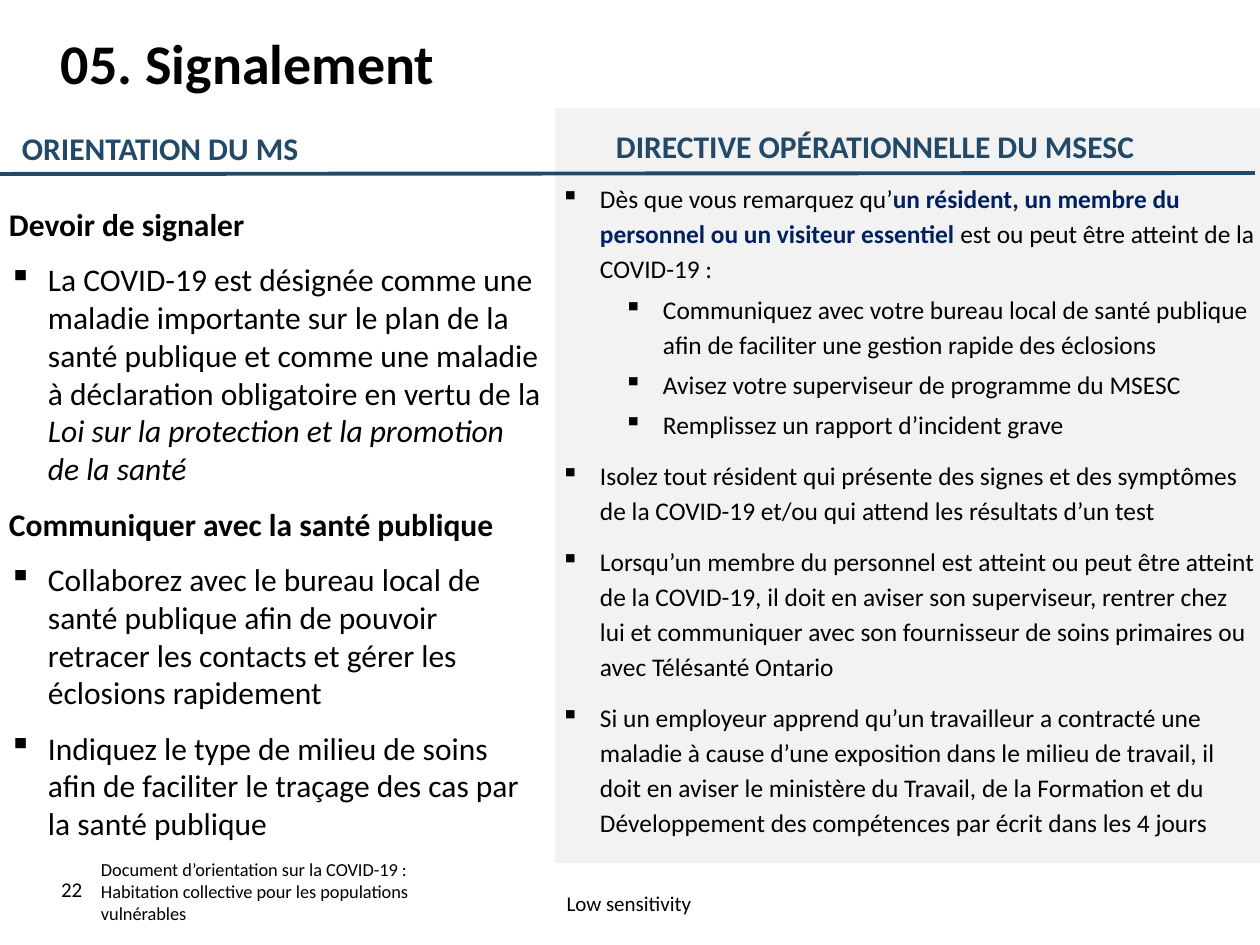
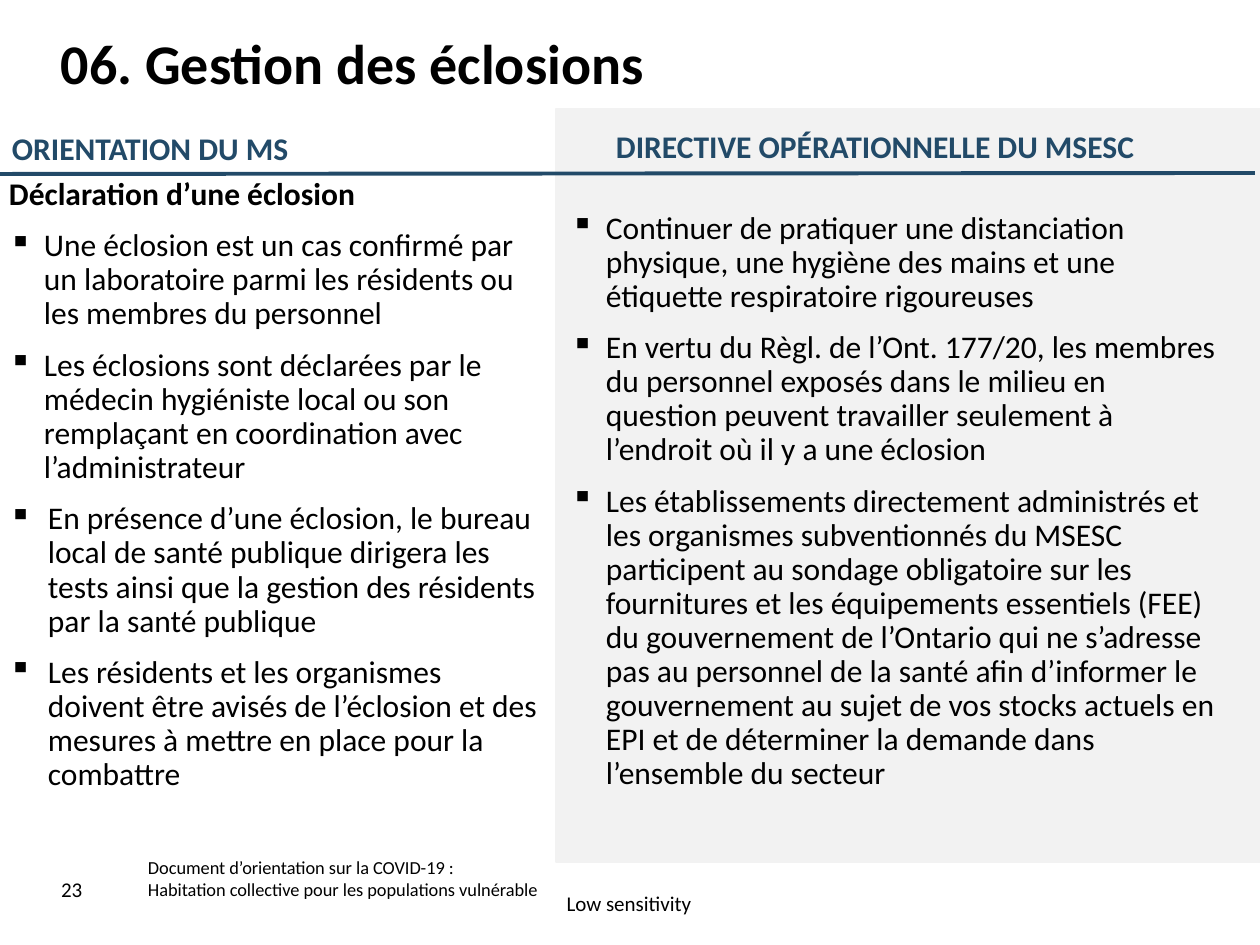
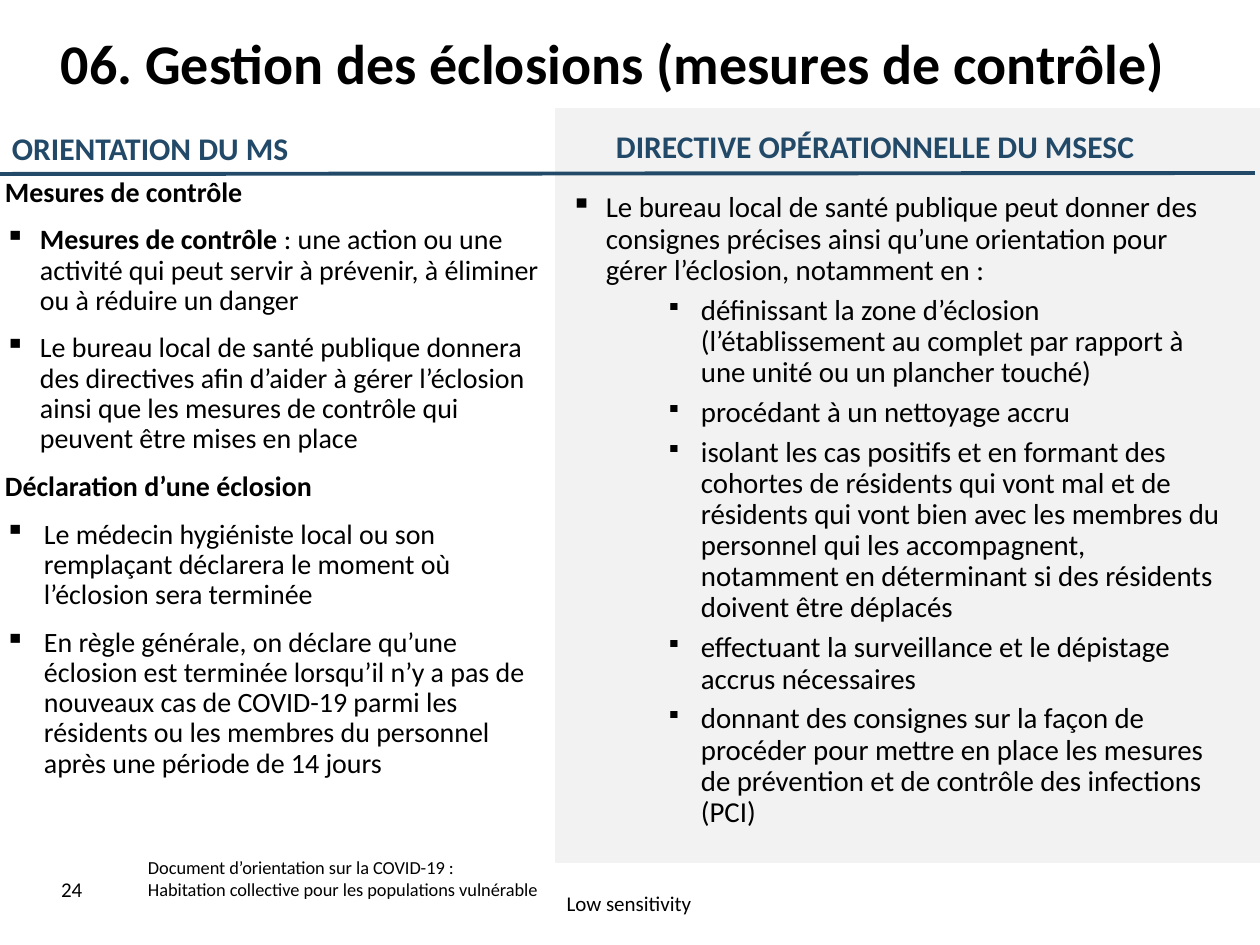
from dataclasses import dataclass

from lxml.etree import SubElement
from pptx import Presentation
from pptx.dml.color import RGBColor
from pptx.enum.shapes import MSO_CONNECTOR, MSO_SHAPE
from pptx.enum.text import MSO_ANCHOR, PP_ALIGN
from pptx.oxml.ns import qn
from pptx.util import Inches, Pt

BLACK = RGBColor(0x00, 0x00, 0x00)
NAVY = RGBColor(0x00, 0x20, 0x60)
TEAL = RGBColor(0x22, 0x4A, 0x68)
GRAY = RGBColor(0xF2, 0xF2, 0xF2)
FONT = "Calibri"
SCALE = Inches(1) / 126
INSET = (13, 6, 13, 6)
BODY = (9, 5, 9, 5)


def px(num):
    return round(num * SCALE)


@dataclass
class Para:
    """A paragraph; each run is text or a (text, look) pair."""
    runs: tuple
    bold: bool = False
    left: int = 0
    hang: int = 0
    before: int = 0
    after: int = 0
    level: int = 0
    mark: int = 100


def head(text):
    return Para((text,), bold=True, before=10)


def item(*runs, hang=39, before=10, after=0):
    return Para(runs, left=hang, hang=hang, before=before, after=after)


def point(*runs):
    return item(*runs, before=6, after=3)


def step(text):
    return Para((text,), left=102, hang=39, after=3, level=1)


def detail(text):
    return Para((text,), left=130, hang=35, before=5, level=1, mark=75)


def bullet(para, spec_):
    props = para._p.get_or_add_pPr()
    props.set("marL", str(px(spec_.left)))
    props.set("indent", str(-px(spec_.hang)))
    SubElement(props, qn("a:buSzPct"), val=str(spec_.mark * 1000))
    SubElement(props, qn("a:buChar"), char="▪")


def add_run(para, part, size, color, bold):
    text, look = (part, "") if isinstance(part, str) else part
    run = para.add_run()
    run.text = text
    font = run.font
    font.name, font.size = FONT, Pt(size)
    font.bold = bold or look in ("bold", "key")
    font.italic = look == "italic"
    font.color.rgb = NAVY if look == "key" else color


def add_text(slide, area, paras, size, color=BLACK, line=1.0, inset=INSET,
             anchor=MSO_ANCHOR.TOP, align=PP_ALIGN.LEFT):
    frame = slide.shapes.add_textbox(*map(px, area)).text_frame
    frame.word_wrap = True
    frame.vertical_anchor = anchor
    (frame.margin_left, frame.margin_top,
     frame.margin_right, frame.margin_bottom) = map(px, inset)
    for num, item_ in enumerate(paras):
        para = frame.add_paragraph() if num else frame.paragraphs[0]
        if item_.hang:
            bullet(para, item_)
        para.level = item_.level
        para.alignment = align
        para.line_spacing = line
        para.space_before = Pt(item_.before if num else 0)
        para.space_after = Pt(item_.after)
        for part in item_.runs:
            add_run(para, part, size, color, item_.bold)


def add_panel(slide):
    panel = slide.shapes.add_shape(MSO_SHAPE.RECTANGLE,
                                   *map(px, (556, 109, 709, 753)))
    panel.shadow.inherit = False
    panel.fill.solid()
    panel.fill.fore_color.rgb = GRAY
    panel.line.color.rgb = GRAY
    panel.line.width = Pt(1)


def add_rule(slide):
    rule = slide.shapes.add_connector(MSO_CONNECTOR.STRAIGHT,
                                      *map(px, (0, 174, 1255, 173)))
    rule.line.color.rgb = TEAL
    rule.line.width = Pt(2.25)
    SubElement(rule._element.spPr, qn("a:effectLst"))


def add_foot(slide, page, note, spot):
    mid = MSO_ANCHOR.MIDDLE
    add_text(slide, (456, 878, 346, 50), [Para(("Low sensitivity",))], 12,
             anchor=mid, align=PP_ALIGN.CENTER)
    add_text(slide, (48, 864, 71, 50), [Para((str(page),))], 12, anchor=mid)
    lines = ["Document d’orientation sur la COVID-19 :", *note]
    add_text(slide, (*spot, 462, 50), [Para((text,)) for text in lines],
             10.5, anchor=mid)


def add_page(deck, page, title, note, spot, left):
    """Add a slide with all that the pages share."""
    slide = deck.slides.add_slide(deck.slide_layouts[6])
    add_panel(slide)
    add_rule(slide)
    add_foot(slide, page, note, spot)
    add_text(slide, (48, 30, 1207, 107), [head(title)], 32, line=0.9)
    add_text(slide, (left, 123, 505, 50), [head("ORIENTATION DU MS")],
             18, TEAL)
    add_text(slide, (603, 121, 627, 50),
             [head("DIRECTIVE OPÉRATIONNELLE DU MSESC")], 18, TEAL)
    return slide


def add_report(deck):
    slide = add_page(
        deck, 22, "05. Signalement",
        ["Habitation collective pour les populations", "vulnérables"],
        (88, 866), 9)
    add_text(slide, (0, 200, 551, 665), [
        head("Devoir de signaler"),
        item("La COVID-19 est désignée comme une maladie importante sur le "
             "plan de la santé publique et comme une maladie à déclaration "
             "obligatoire en vertu de la ",
             ("Loi sur la protection et la promotion de la santé", "italic")),
        head("Communiquer avec la santé publique"),
        item("Collaborez avec le bureau local de santé publique afin de "
             "pouvoir retracer les contacts et gérer les éclosions "
             "rapidement"),
        item("Indiquez le type de milieu de soins afin de faciliter le "
             "traçage des cas par la santé publique"),
    ], 18, inset=BODY)
    add_text(slide, (548, 179, 709, 640), [
        point("Dès que vous remarquez qu’",
              ("un résident, un membre du personnel ou un visiteur "
               "essentiel ", "key"),
              "est ou peut être atteint de la COVID-19 :"),
        step("Communiquez avec votre bureau local de santé publique afin de "
             "faciliter une gestion rapide des éclosions"),
        step("Avisez votre superviseur de programme du MSESC"),
        step("Remplissez un rapport d’incident grave"),
        point("Isolez tout résident qui présente des signes et des symptômes "
              "de la COVID-19 et/ou qui attend les résultats d’un test"),
        point("Lorsqu’un membre du personnel est atteint ou peut être "
              "atteint de la COVID-19, il doit en aviser son superviseur, "
              "rentrer chez lui et communiquer avec son fournisseur de soins "
              "primaires ou avec Télésanté Ontario"),
        point("Si un employeur apprend qu’un travailleur a contracté une "
              "maladie à cause d’une exposition dans le milieu de travail, "
              "il doit en aviser le ministère du Travail, de la Formation et "
              "du Développement des compétences par écrit dans les 4 jours"),
    ], 14.5, line=Pt(20), inset=(13, 0, 0, 0))


def add_cases(deck, page, title):
    """Add a page of the part on outbreaks."""
    note = ["Habitation collective pour les populations vulnérable"]
    return add_page(deck, page, title, note, (135, 853), -1)


def add_spread(deck):
    slide = add_cases(deck, 23, "06. Gestion des éclosions")
    add_text(slide, (0, 173, 552, 693), [
        head("Déclaration d’une éclosion"),
        item("Une éclosion est un cas confirmé par un laboratoire parmi les "
             "résidents ou les membres du personnel", hang=35),
        item("Les éclosions sont déclarées par le médecin hygiéniste local "
             "ou son remplaçant en coordination avec l’administrateur",
             hang=35),
        item("En présence d’une éclosion, le bureau local de santé publique "
             "dirigera les tests ainsi que la gestion des résidents par la "
             "santé publique"),
        item("Les résidents et les organismes doivent être avisés de "
             "l’éclosion et des mesures à mettre en place pour la "
             "combattre"),
    ], 18, line=0.9, inset=BODY)
    add_text(slide, (562, 207, 667, 600), [
        item("Continuer de pratiquer une distanciation physique, une hygiène "
             "des mains et une étiquette respiratoire rigoureuses", hang=35),
        item("En vertu du Règl. de l’Ont. 177/20, les membres du personnel "
             "exposés dans le milieu en question peuvent travailler "
             "seulement à l’endroit où il y a une éclosion", hang=35),
        item("Les établissements directement administrés et les organismes "
             "subventionnés du MSESC participent au sondage obligatoire sur "
             "les fournitures et les équipements essentiels (FEE) du "
             "gouvernement de l’Ontario qui ne s’adresse pas au personnel de "
             "la santé afin d’informer le gouvernement au sujet de vos "
             "stocks actuels en EPI et de déterminer la demande dans "
             "l’ensemble du secteur", hang=35),
    ], 18, line=0.9, inset=BODY)


def add_control(deck):
    slide = add_cases(deck, 24,
                      "06. Gestion des éclosions (mesures de contrôle)")
    add_text(slide, (0, 173, 552, 693), [
        head("Mesures de contrôle"),
        item(("Mesures de contrôle ", "bold"),
             ": une action ou une activité qui peut servir à prévenir, à "
             "éliminer ou à réduire un danger", hang=35),
        item("Le bureau local de santé publique donnera des directives afin "
             "d’aider à gérer l’éclosion ainsi que les mesures de contrôle "
             "qui peuvent être mises en place", hang=35),
        head("Déclaration d’une éclosion"),
        item("Le médecin hygiéniste local ou son remplaçant déclarera le "
             "moment où l’éclosion sera terminée"),
        item("En règle générale, on déclare qu’une éclosion est terminée "
             "lorsqu’il n’y a pas de nouveaux cas de COVID-19 parmi les "
             "résidents ou les membres du personnel après une période de "
             "14 jours"),
    ], 16, line=0.9, inset=(5, 5, 5, 5))
    add_text(slide, (562, 188, 667, 687), [
        item("Le bureau local de santé publique peut donner des consignes "
             "précises ainsi qu’une orientation pour gérer l’éclosion, "
             "notamment en :", hang=35),
        detail("définissant la zone d’éclosion (l’établissement au complet "
               "par rapport à une unité ou un plancher touché)"),
        detail("procédant à un nettoyage accru"),
        detail("isolant les cas positifs et en formant des cohortes de "
               "résidents qui vont mal et de résidents qui vont bien avec "
               "les membres du personnel qui les accompagnent, notamment en "
               "déterminant si des résidents doivent être déplacés"),
        detail("effectuant la surveillance et le dépistage accrus "
               "nécessaires"),
        detail("donnant des consignes sur la façon de procéder pour mettre "
               "en place les mesures de prévention et de contrôle des "
               "infections (PCI)"),
    ], 16.5, line=0.9, inset=BODY)


def main():
    deck = Presentation()
    deck.slide_width, deck.slide_height = px(1260), px(945)
    add_report(deck)
    add_spread(deck)
    add_control(deck)
    deck.save("out.pptx")


if __name__ == "__main__":
    main()
